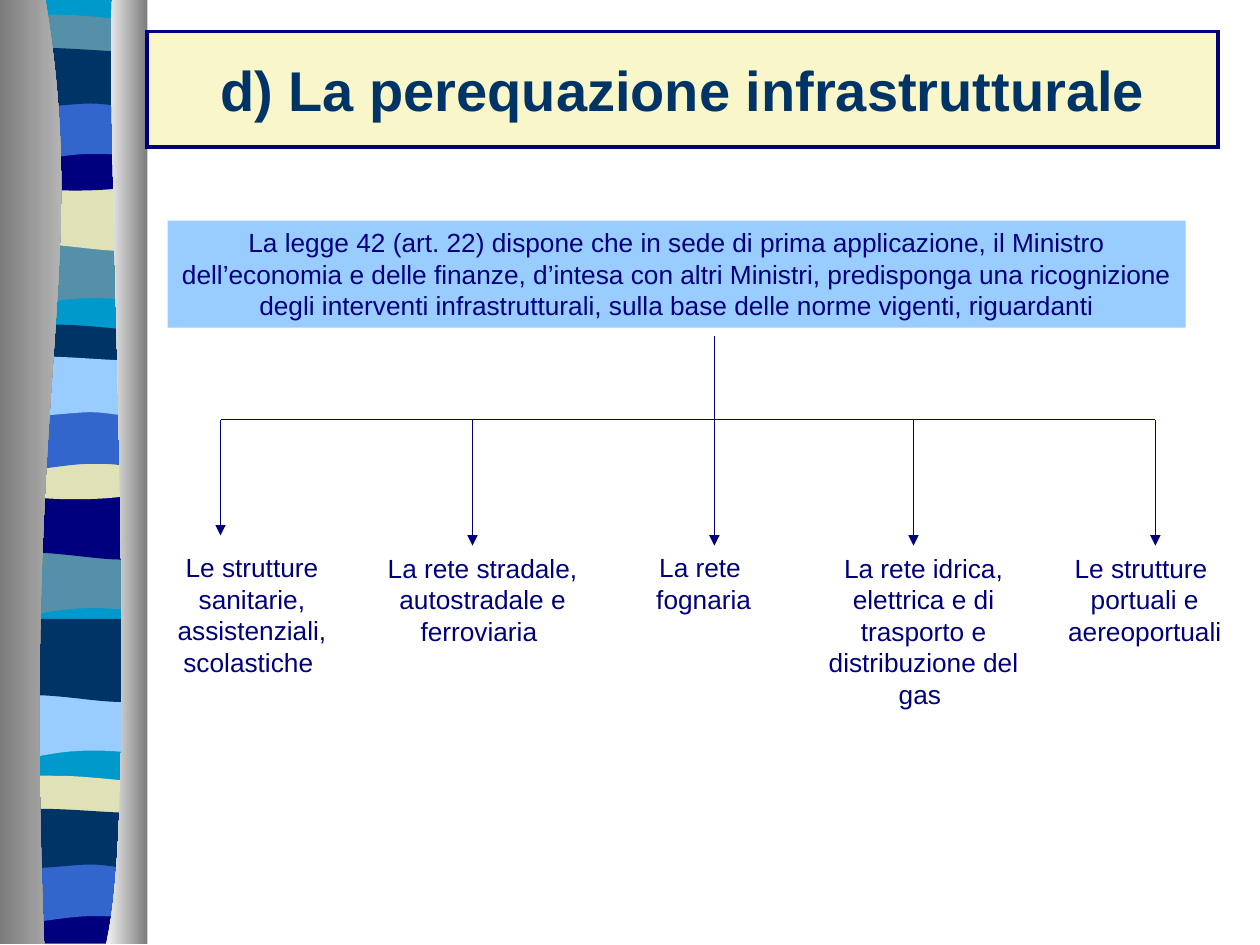
"""Build the slide on infrastructure equalisation with its wavy side border."""
from lxml import etree
from pptx import Presentation
from pptx.dml.color import RGBColor
from pptx.enum.shapes import MSO_CONNECTOR, MSO_SHAPE
from pptx.enum.text import MSO_ANCHOR, PP_ALIGN
from pptx.oxml.ns import qn
from pptx.util import Inches, Pt

STRAIGHT = MSO_CONNECTOR.STRAIGHT
RECTANGLE = MSO_SHAPE.RECTANGLE
CENTER = PP_ALIGN.CENTER
MIDDLE, TOP = MSO_ANCHOR.MIDDLE, MSO_ANCHOR.TOP

THEME = {
    "font": "Arial", "title_size": 32, "body_size": 15, "leading": 18,
    "navy": "00007E", "ink": "003366", "cream": "F9F7CA", "sky": "99CCFF",
    "blue": "3366CC", "cyan": "0099CC", "teal": "5490A8", "sand": "E1E1B7",
    "dark": "7C7C7C", "soft": "D0D0D0", "light": "F4F4F4",
}

TITLE = "d) La perequazione infrastrutturale"
PREMISE = ("La legge 42 (art. 22) dispone che in sede di prima applicazione, il Ministro "
           "dell’economia e delle finanze, d’intesa con altri Ministri, predisponga una "
           "ricognizione degli interventi infrastrutturali, sulla base delle norme vigenti, "
           "riguardanti")

# (arrow x, arrow end y, label left, label width, label height, paragraphs)
BRANCHES = [
    (1.75, 4.25, 1, 2, 1.1, ["Le strutture sanitarie, assistenziali, scolastiche "]),
    (3.75, 4.33, 2.83, 2, 0.85, ["La rete stradale, autostradale e ferroviaria "]),
    (5.67, 4.33, 4.92, 1.33, 0.6, ["La rete ", "fognaria"]),
    (7.25, 4.33, 6.33, 2, 1.35,
     ["La rete idrica, elettrica e di trasporto e distribuzione del gas "]),
    (9.17, 4.33, 8.25, 1.67, 0.85, ["Le strutture ", "portuali e aereoportuali"]),
]
TRUNK_X, TRUNK_TOP, BAR_Y, LABEL_TOP = 5.67, 2.67, 3.33, 4.33

LEFT, RIGHT = 0.05, 1.14
PROFILES = {
    "sheet": [(RIGHT, 0), (RIGHT, 7.47), (LEFT, 7.47), (LEFT, 0)],
    "base": [(RIGHT, 0), (RIGHT, 0.37), (LEFT, 0.37), (LEFT, 0),
             (0.71, 0.05, 0.9, 0, RIGHT, 0)],
    "sag": [(RIGHT, 0), (RIGHT, 0.47), (0.39, 0.39, 0.24, 0.55, LEFT, 0.47), (LEFT, 0)],
    "swell": [(RIGHT, 0), (RIGHT, 0.47), (0.96, 0.55, 0.39, 0.41, LEFT, 0.47), (LEFT, 0)],
    "lens": [(RIGHT, 0.05), (RIGHT, 0.29), (0.96, 0.34, 0.24, 0.34, LEFT, 0.29),
             (LEFT, 0.05), (0.12, 0, 0.29, 0.01, 0.47, 0.01),
             (0.65, 0.01, 1, 0.04, RIGHT, 0.05)],
    "bowl": [(RIGHT, 0), (RIGHT, 0.32), (0.96, 0.38, 0.24, 0.38, LEFT, 0.32), (LEFT, 0),
             (0.72, 0.05, 0.91, 0, RIGHT, 0)],
    "arch": [(RIGHT, 0), (RIGHT, 0.47), (0.97, 0.42, 0.9, 0.42, 0.72, 0.42),
             (0.54, 0.42, 0.22, 0.47, LEFT, 0.47), (LEFT, 0)],
    "ripple": [(RIGHT, 0.05), (RIGHT, 0.36), (1.07, 0.41, 0.9, 0.36, 0.72, 0.36),
               (0.54, 0.36, 0.17, 0.41, LEFT, 0.36), (LEFT, 0.05),
               (0.21, 0, 0.79, 0.05, 0.97, 0.05)],
    "left edge": [(0.36, 0), (0.72, 2.16, 0.17, 2.96, 0.35, 7.49), (0, 7.49), (0, 0)],
    "right edge": [(0.89, 0), (0.84, 1.25, 1.12, 6.46, 0.84, 7.49), (1.17, 7.49), (1.17, 0)],
}
BORDER = [
    ("sheet", 0, ["cyan"]),
    ("sag", 1.85, ["teal"]), ("swell", 1.41, ["sand"]), ("lens", 0.16, ["teal"]),
    ("bowl", 1.08, ["navy"]), ("arch", 0.74, ["blue"]), ("ripple", 0.41, ["ink"]),
    ("sag", 4.31, ["teal"]), ("swell", 3.86, ["navy"]), ("lens", 2.62, ["ink"]),
    ("bowl", 3.53, ["sand"]), ("arch", 3.2, ["blue"]), ("ripple", 2.86, ["sky"]),
    ("sag", 5.44, ["sky"]), ("swell", 4.99, ["ink"]), ("lens", 6.2, ["sand"]),
    ("base", 7.12, ["navy"]), ("arch", 6.79, ["blue"]), ("ripple", 6.45, ["ink"]),
    ("left edge", 0, ["dark", "soft"]), ("right edge", 0, ["light", "dark"]),
]
UNSTRETCHED = ("sheet", "base", "left edge", "right edge")
STRETCH = 1.33
MASTER_ID_OFFSET = 100


def color(name):
    return RGBColor.from_string(THEME[name])


def add_band(group, profile, top, colors):
    steps = PROFILES[profile]
    middle = (steps[0][1] + steps[1][1]) / 2
    stretch = 1 if profile in UNSTRETCHED else STRETCH
    start, *points = [(Inches(x), Inches(top + middle + (y - middle) * stretch))
                      for step in steps for x, y in zip(step[::2], step[1::2])]
    builder = group.shapes.build_freeform(*start)
    builder.add_line_segments(points)
    band = builder.convert_to_shape()
    segments = iter(list(band.element.iter(qn("a:lnTo"))))
    for step in steps[1:]:
        segment = next(segments)
        if len(step) == 6:
            segment.tag = qn("a:cubicBezTo")
            for _ in range(2):
                control = next(segments)
                segment.append(control[0])
                control.getparent().remove(control)
    band.shadow.inherit = False
    band.line.fill.background()
    if len(colors) == 1:
        band.fill.solid()
        band.fill.fore_color.rgb = color(colors[0])
    else:
        band.fill.gradient()
        band.fill.gradient_angle = 0
        for stop, name in zip(band.fill.gradient_stops, colors):
            stop.color.rgb = color(name)


def add_border(slide, master):
    group = slide.shapes.add_group_shape()
    for band in BORDER:
        add_band(group, *band)
    for properties in group.element.iter(qn("p:cNvPr")):
        properties.set("id", str(int(properties.get("id")) + MASTER_ID_OFFSET))
    master.shapes.element.append(group.element)


def place(shape, *box):
    for side, value in zip(("left", "top", "width", "height"), box):
        setattr(shape, side, Inches(value))


def write(shape, paragraphs, size, ink, bold=False, anchor=TOP, leading=None):
    frame = shape.text_frame
    frame.word_wrap = True
    frame.vertical_anchor = anchor
    frame.text = "\n".join(paragraphs)
    font_format = {"name": THEME["font"], "size": Pt(THEME[size]), "bold": bold}
    for paragraph in frame.paragraphs:
        paragraph.alignment = CENTER
        paragraph.line_spacing = leading
        for run in paragraph.runs:
            for key, value in font_format.items():
                setattr(run.font, key, value)
            run.font.color.rgb = color(ink)


def add_line(slide, x1, y1, x2, y2, arrow=False):
    connector = slide.shapes.add_connector(STRAIGHT, *map(Inches, (x1, y1, x2, y2)))
    connector.line.color.rgb = color("navy")
    connector.line.width = Pt(0.75)
    if arrow:
        etree.SubElement(connector.line._get_or_add_ln(), qn("a:tailEnd"), type="triangle")
    etree.SubElement(connector.element.spPr, qn("a:effectLst"))


def main():
    deck = Presentation()
    deck.slide_width, deck.slide_height = Inches(10), Inches(7.5)
    slide = deck.slides.add_slide(deck.slide_layouts[5])
    add_border(slide, deck.slide_master)

    heading = slide.shapes.title
    place(heading, 1.17, 0.25, 8.5, 0.92)
    heading.fill.solid()
    heading.fill.fore_color.rgb = color("cream")
    heading.line.color.rgb = color("navy")
    heading.line.width = Pt(2.25)
    etree.SubElement(heading.line._get_or_add_ln(), qn("a:miter"), lim="800000")
    write(heading, [TITLE], "title_size", "ink", bold=True, anchor=MIDDLE)

    body = {"size": "body_size", "ink": "navy", "leading": Pt(THEME["leading"])}
    premise = slide.shapes.add_shape(RECTANGLE, *map(Inches, (1.33, 1.75, 8.08, 0.85)))
    premise.shadow.inherit = False
    premise.fill.solid()
    premise.fill.fore_color.rgb = color("sky")
    premise.line.fill.background()
    write(premise, [PREMISE], **body)

    add_line(slide, TRUNK_X, TRUNK_TOP, TRUNK_X, BAR_Y)
    add_line(slide, BRANCHES[0][0], BAR_Y, BRANCHES[-1][0], BAR_Y)
    for x, tip, left, width, height, paragraphs in BRANCHES:
        add_line(slide, x, BAR_Y, x, tip, arrow=True)
        label = slide.shapes.add_textbox(*map(Inches, (left, LABEL_TOP, width, height)))
        write(label, paragraphs, **body)

    deck.save("out.pptx")


if __name__ == "__main__":
    main()
